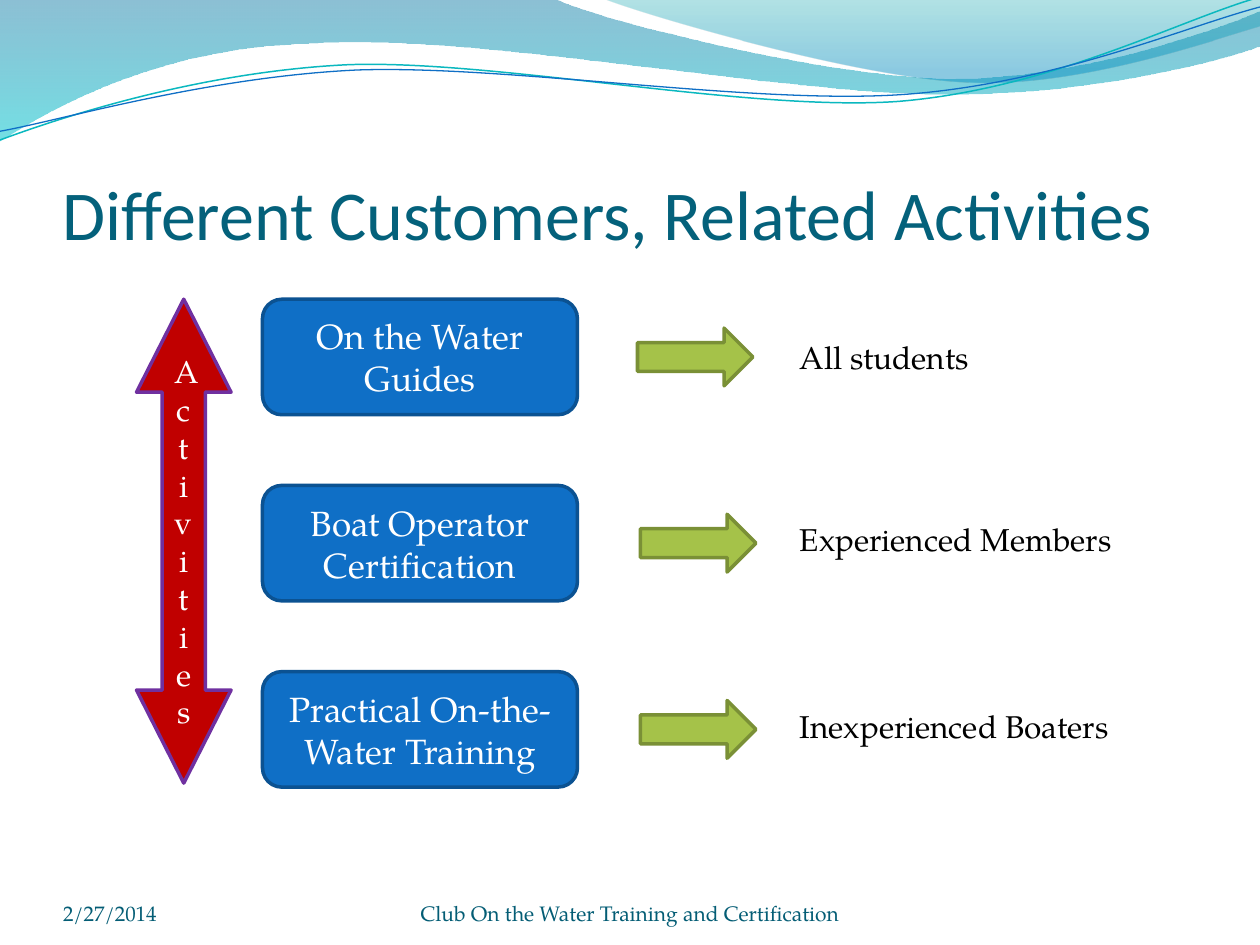
from pptx import Presentation
from pptx.dml.color import RGBColor
from pptx.enum.shapes import MSO_SHAPE
from pptx.enum.text import MSO_ANCHOR, PP_ALIGN
from pptx.oxml.ns import qn
from pptx.util import Pt
from lxml import etree

ROUNDED = MSO_SHAPE.ROUNDED_RECTANGLE
RIGHT_ARROW = MSO_SHAPE.RIGHT_ARROW
UP_DOWN_ARROW = MSO_SHAPE.UP_DOWN_ARROW
TOP, MIDDLE, BOTTOM = MSO_ANCHOR.TOP, MSO_ANCHOR.MIDDLE, MSO_ANCHOR.BOTTOM
LEFT, CENTER = PP_ALIGN.LEFT, PP_ALIGN.CENTER

BODY_FONT = "TeX Gyre Pagella"
TITLE_FONT = "Calibri"
COLORS = {
    "title": "04617B", "footer": "045D75", "black": "000000", "white": "FFFFFF",
    "box": "0F6FC6", "box_line": "0B5292",
    "arrow": "A5C249", "arrow_line": "7A9036",
    "activities": "C00000", "activities_line": "7030A0",
    "wave_blue": "0074A1", "wave_cyan": "00C6CF",
    "crest_teal": "00A1A9", "crest_blue": "008BBF",
    "teal_curve": "0AB8BF", "blue_curve": "0F6FC6",
}
FLUSH = {"margin_left": 0, "margin_right": 0, "margin_top": 0, "margin_bottom": 0}
TITLE_FRAME = {**FLUSH, "margin_top": Pt(3.6)}
ROW_TOP, ROW_STEP = 171, 106.4
ROWS = [
    ("On the Water Guides", "All students", 364.3, 189.4, 144),
    ("Boat Operator Certification", "Experienced Members", 366, 293.6, 211),
    ("Practical On-the-Water Training", "Inexperienced Boaters", 366, 400.3, 211),
]

WAVE = [(0, 0), (317, -0.7), (343, 12, 478, 45, 546, 45), (614, 45, 690, 19, 720, 6.5),
        (721, 26), (708, 32, 626, 55, 537, 54), (448, 54, 275, 20, 185, 24.5),
        (93, 26, 33, 60, -0.7, 81)]
CREST = [(345, -0.7), (366, 8, 491, 45, 554, 47), (616, 50, 692, 23, 720, 15), (720, 0)]
TEAL_CURVE = [(0, 80), (35, 67, 114, 41, 199, 37), (284, 34, 427, 64, 513, 58),
              (600, 51, 675, 11, 719, -1.4)]
BLUE_CURVE = [(0, 75), (34, 69, 118, 44, 204, 40), (290, 37, 430, 60, 516, 54),
              (602, 48, 678, 15, 720, 4)]


def color(name):
    return RGBColor.from_string(COLORS[name])


def set_format(target, values):
    for name, value in values.items():
        setattr(target, name, value)


def set_text(shape, text, size, color_name, font=BODY_FONT, align=LEFT, anchor=TOP, frame=None):
    text_frame = shape.text_frame
    set_format(text_frame, {"word_wrap": True, "vertical_anchor": anchor, **(frame or {})})
    paragraph = text_frame.paragraphs[0]
    paragraph.alignment = align
    run = paragraph.add_run()
    run.text = text
    set_format(run.font, {"size": Pt(size), "name": font})
    run.font.color.rgb = color(color_name)


def add_text(slide, box, text, size, color_name, **options):
    shape = slide.shapes.add_textbox(*map(Pt, box))
    set_text(shape, text, size, color_name, **options)


def add_block(slide, kind, box, style):
    shape = slide.shapes.add_shape(kind, *map(Pt, box))
    shape.shadow.inherit = False
    shape.fill.solid()
    shape.fill.fore_color.rgb = color(style)
    shape.line.color.rgb = color(style + "_line")
    shape.line.width = Pt(2)
    return shape


def bend(shape, segments):
    lines = iter(list(shape._element.spPr.iter(qn("a:lnTo"))))
    for segment in segments:
        group = [next(lines) for _ in range(len(segment) // 2)]
        if len(group) == 3:
            curve = etree.Element(qn("a:cubicBezTo"))
            group[0].addprevious(curve)
            for line in group:
                curve.append(line[0])
                line.getparent().remove(line)


def add_outline(slide, segments, close):
    points = [(Pt(segment[i]), Pt(segment[i + 1]))
              for segment in segments for i in range(0, len(segment), 2)]
    builder = slide.shapes.build_freeform(*points[0])
    builder.add_line_segments(points[1:], close=close)
    shape = builder.convert_to_shape()
    bend(shape, segments[1:])
    shape.shadow.inherit = False
    return shape


def add_wave(slide, segments, stops):
    shape = add_outline(slide, segments, True)
    shape.line.fill.background()
    shape.fill.gradient()
    shape.fill.gradient_angle = 270
    for stop, (position, name, _) in zip(shape.fill.gradient_stops, stops):
        stop.position = position
        stop.color.rgb = color(name)
    for element, (_, _, opacity) in zip(shape._element.spPr.iter(qn("a:srgbClr")), stops):
        etree.SubElement(element, qn("a:alpha")).set("val", str(opacity * 1000))


def add_curve(slide, segments, color_name, width):
    shape = add_outline(slide, segments, False)
    shape.fill.background()
    shape.line.color.rgb = color(color_name)
    shape.line.width = Pt(width)


def add_row(slide, index, activity, customer, arrow_left, label_top, label_width):
    top = ROW_TOP + index * ROW_STEP
    box = add_block(slide, ROUNDED, (150, top, 180, 66), "box")
    set_text(box, activity, 20, "white", align=CENTER, anchor=MIDDLE)
    add_block(slide, RIGHT_ARROW, (arrow_left, top + 16.5, 66, 33), "arrow")
    add_text(slide, (450, label_top, label_width, 29), customer, 18, "black")


def add_activities_arrow(slide):
    shape = add_block(slide, UP_DOWN_ARROW, (78, 171, 54, 276.5), "activities")
    guides = shape._element.spPr.find(qn("a:prstGeom")).find(qn("a:avLst"))
    for guide in list(guides):
        guides.remove(guide)
    for name, value in (("adj1", 45600), ("adj2", 98400)):
        guide = etree.SubElement(guides, qn("a:gd"))
        guide.set("name", name)
        guide.set("fmla", f"val {value}")
    set_text(shape, "Activities", 18, "white", align=CENTER, anchor=MIDDLE)


def main():
    presentation = Presentation()
    presentation.slide_width, presentation.slide_height = Pt(720), Pt(540)
    slide = presentation.slides.add_slide(presentation.slide_layouts[6])

    add_wave(slide, WAVE, [(0, "wave_blue", 45), (1, "wave_cyan", 55)])
    add_wave(slide, CREST, [(0, "crest_teal", 30), (0.8, "crest_blue", 45)])
    add_curve(slide, TEAL_CURVE, "teal_curve", 0.85)
    add_curve(slide, BLUE_CURVE, "blue_curve", 0.75)

    add_text(slide, (36, 55.5, 648, 90), "Different Customers, Related Activities", 40, "title",
             font=TITLE_FONT, anchor=BOTTOM, frame=TITLE_FRAME)
    add_text(slide, (36, 500.4, 168, 28.8), "2/27/2014", 12, "footer",
             anchor=BOTTOM, frame=FLUSH)
    add_text(slide, (228, 500.4, 264, 28.8), "Club On the Water Training and Certification",
             12, "footer", align=CENTER, anchor=BOTTOM, frame=FLUSH)

    for index, row in enumerate(ROWS):
        add_row(slide, index, *row)
    add_activities_arrow(slide)

    presentation.save("out.pptx")


if __name__ == "__main__":
    main()
